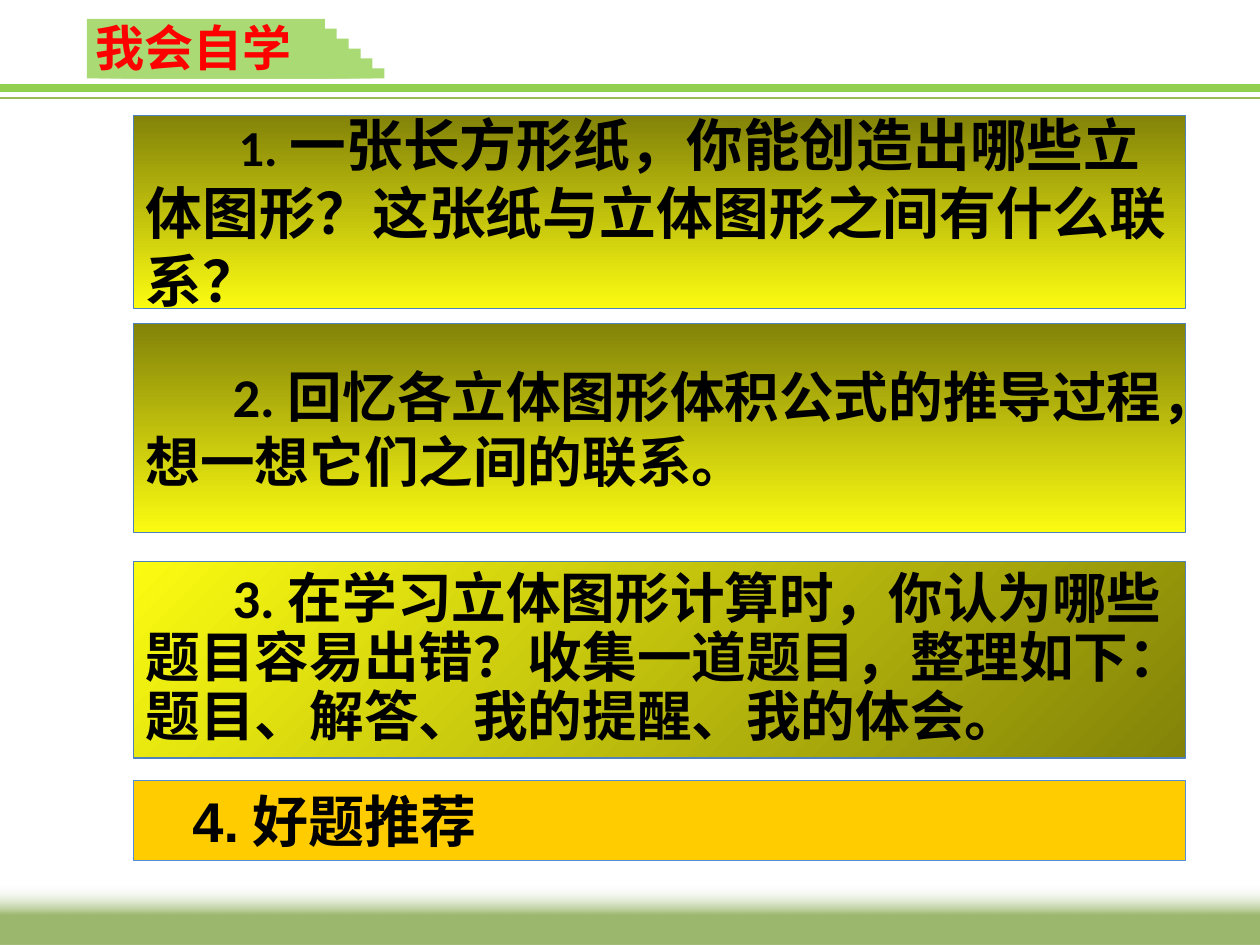
from typing import NamedTuple, Optional

from lxml import etree
from pptx import Presentation
from pptx.dml.color import RGBColor
from pptx.enum.shapes import MSO_CONNECTOR, MSO_SHAPE
from pptx.enum.text import MSO_ANCHOR, PP_ALIGN
from pptx.oxml.ns import qn
from pptx.util import Cm, Pt

BLACK = RGBColor(0x00, 0x00, 0x00)
RED = RGBColor(0xFF, 0x00, 0x00)
YELLOW = RGBColor(0xFB, 0xFB, 0x11)
OLIVE = RGBColor(0x83, 0x83, 0x09)
ORANGE = RGBColor(0xFF, 0xCC, 0x00)
BLUE = RGBColor(0x4F, 0x81, 0xBD)
LIGHT_BLUE = RGBColor(0x55, 0x8E, 0xD5)
RULE_GREEN = RGBColor(0x9B, 0xBB, 0x59)
BRIGHT_GREEN = RGBColor(0x92, 0xD0, 0x50)
TAB_GREEN = RGBColor(0xA9, 0xDA, 0x74)
BAND_GREEN = RGBColor(0x9C, 0xB8, 0x6E)
BAND_FADE = RGBColor(0xF8, 0xFA, 0xF4)

WIDTH, HEIGHT = 25.4, 19.05


class Stop(NamedTuple):
    pos: int
    color: RGBColor
    alpha: int = 100


class Rule(NamedTuple):
    y: float
    color: RGBColor
    weight: float


class Task(NamedTuple):
    top: float
    height: float
    number: str
    text: str
    size: float
    indent: float
    angle: Optional[int] = 270  # None: plain orange
    number_size: Optional[float] = None
    spacing: Optional[float] = None
    font: str = "Calibri"
    line: RGBColor = BLUE


RULES = [Rule(1.78, RULE_GREEN, 1), Rule(1.98, RULE_GREEN, 1),
         Rule(1.78, BRIGHT_GREEN, 4.5)]

TASKS = [
    Task(2.33, 3.89, "1.", "一张长方形纸，你能创造出哪些立体图形？这张纸与立体图形之间有什么联系？",
         32.4, 1.87, number_size=28.8),
    Task(6.52, 4.22, "2.", "回忆各立体图形体积公式的推导过程，想一想它们之间的联系。",
         31.2, 1.75),
    Task(11.32, 3.96, "3.",
         "在学习立体图形计算时，你认为哪些题目容易出错？收集一道题目，整理如下：题目、解答、我的提醒、我的体会。",
         31.2, 1.75, angle=45, spacing=0.9),
    Task(15.73, 1.62, "4.", "好题推荐", 32, 0.94, angle=None, font="Arial",
         line=LIGHT_BLUE),
]


def set_gradient(sp, stops: list[Stop], angle: int) -> None:
    """Fill with a linear gradient whose angle runs clockwise."""
    sp.fill.gradient()
    grad = sp.fill._fill._gradFill
    for child in list(grad):
        grad.remove(child)
    gs_lst = etree.SubElement(grad, qn("a:gsLst"))
    for stop in stops:
        gs = etree.SubElement(gs_lst, qn("a:gs"), pos=str(stop.pos * 1000))
        clr = etree.SubElement(gs, qn("a:srgbClr"), val=str(stop.color))
        if stop.alpha < 100:
            etree.SubElement(clr, qn("a:alpha"), val=str(stop.alpha * 1000))
    etree.SubElement(grad, qn("a:lin"), ang=str(angle * 60000), scaled="1")


def add_rect(s, left: float, top: float, width: float, height: float,
             fill: Optional[RGBColor] = None, line: Optional[RGBColor] = None):
    sp = s.shapes.add_shape(MSO_SHAPE.RECTANGLE, Cm(left), Cm(top), Cm(width), Cm(height))
    sp.shadow.inherit = False
    if fill is not None:
        sp.fill.solid()
        sp.fill.fore_color.rgb = fill
    if line is None:
        sp.line.fill.background()
    else:
        sp.line.color.rgb = line
        sp.line.width = Pt(0.75)
    return sp


def add_rule(s, rule: Rule) -> None:
    ln = s.shapes.add_connector(MSO_CONNECTOR.STRAIGHT, 0, Cm(rule.y), Cm(WIDTH), Cm(rule.y))
    ln.line.color.rgb = rule.color
    ln.line.width = Pt(rule.weight)
    etree.SubElement(ln._element.spPr, qn("a:effectLst"))


def add_run(p, text: str, *, size: float, font: str, color: RGBColor = BLACK) -> None:
    r = p.add_run()
    r.text = text
    r.font.size = Pt(size)
    r.font.bold = True
    r.font.name = font
    r.font.color.rgb = color
    etree.SubElement(r._r.get_or_add_rPr(), qn("a:ea"), typeface=font)


def add_task(s, task: Task) -> None:
    sp = add_rect(s, 2.69, task.top, 21.21, task.height, ORANGE, task.line)
    if task.angle is not None:
        set_gradient(sp, [Stop(0, YELLOW), Stop(100, OLIVE)], task.angle)
    tf = sp.text_frame
    tf.word_wrap = True
    tf.vertical_anchor = MSO_ANCHOR.MIDDLE
    p = tf.paragraphs[0]
    p.alignment = PP_ALIGN.LEFT
    if task.spacing:
        p.line_spacing = task.spacing
    p._p.get_or_add_pPr().set("indent", str(Cm(task.indent)))
    add_run(p, task.number, size=task.number_size or task.size, font=task.font)
    add_run(p, task.text, size=task.size, font=task.font)


def add_heading(s) -> None:
    """Stepped green tab with the heading over it."""
    step = 0.24
    for i in range(6):
        drop = i * 0.2
        add_rect(s, 1.75 + i * step, 0.38 + drop, 4.8, 1.2 - drop, TAB_GREEN)
    tf = s.shapes.add_textbox(Cm(1.68), Cm(0.23), Cm(7.11), Cm(1.45)).text_frame
    tf.word_wrap = True
    tf.vertical_anchor = MSO_ANCHOR.MIDDLE
    add_run(tf.paragraphs[0], "我会自学", size=28, font="Noto Sans CJK SC", color=RED)


def main() -> None:
    prs = Presentation()
    prs.slide_width, prs.slide_height = Cm(WIDTH), Cm(HEIGHT)
    s = prs.slides.add_slide(prs.slide_layouts[6])
    band = add_rect(s, 0, 17.86, WIDTH, 1.19)
    set_gradient(band, [Stop(50, BAND_GREEN), Stop(100, BAND_FADE, 0)], 270)
    for rule in RULES:
        add_rule(s, rule)
    add_heading(s)
    for task in TASKS:
        add_task(s, task)
    prs.save("out.pptx")


if __name__ == "__main__":
    main()
